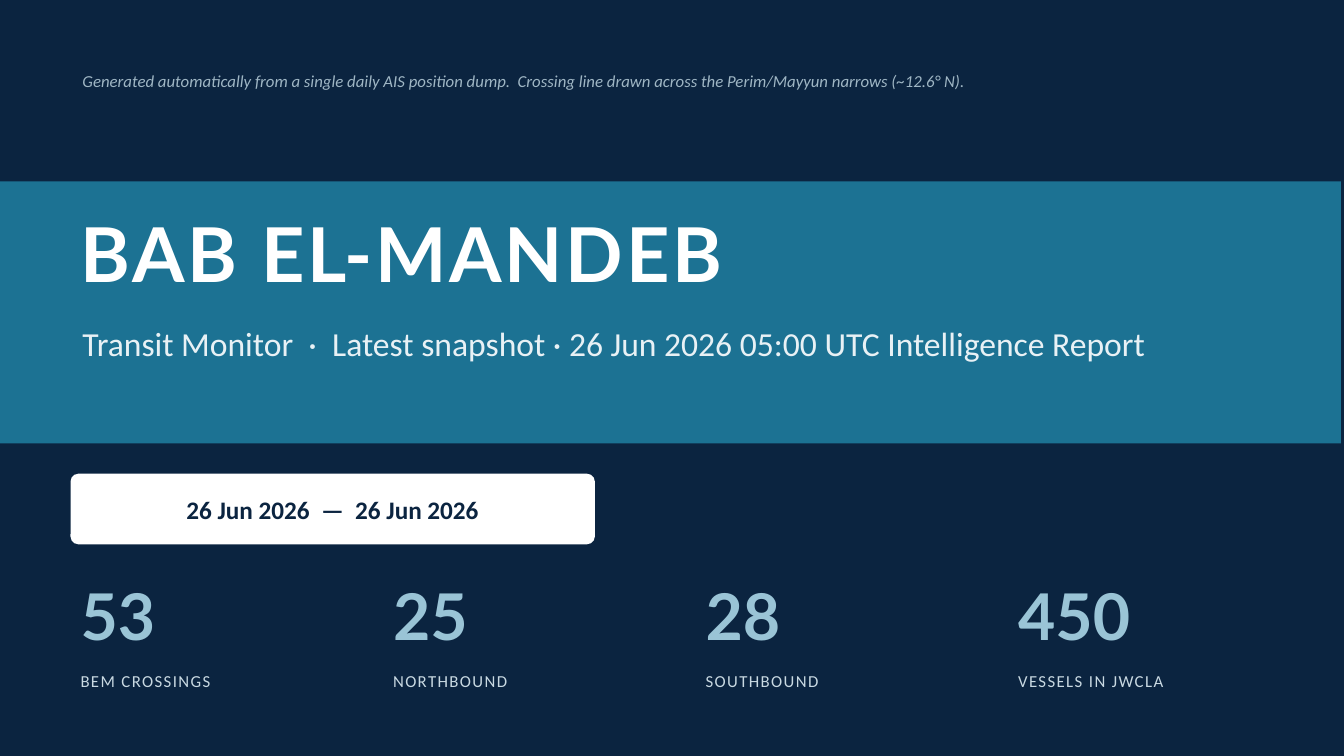
from dataclasses import dataclass

from pptx import Presentation
from pptx.dml.color import RGBColor
from pptx.enum.shapes import MSO_SHAPE
from pptx.enum.text import MSO_ANCHOR, PP_ALIGN
from pptx.util import Inches, Pt

RECTANGLE, ROUNDED = MSO_SHAPE.RECTANGLE, MSO_SHAPE.ROUNDED_RECTANGLE
MIDDLE, LEFT, CENTER = MSO_ANCHOR.MIDDLE, PP_ALIGN.LEFT, PP_ALIGN.CENTER

TITLE = "BAB EL-MANDEB"
SUBTITLE = "Transit Monitor  ·  Latest snapshot · 26 Jun 2026 05:00 UTC Intelligence Report"
PERIOD = "26 Jun 2026  —  26 Jun 2026"
SOURCE_NOTE = (
    "Generated automatically from a single daily AIS position dump.  "
    "Crossing line drawn across the Perim/Mayyun narrows (~12.6° N)."
)
STATISTICS = [
    ("53", "BEM CROSSINGS"),
    ("25", "NORTHBOUND"),
    ("28", "SOUTHBOUND"),
    ("450", "VESSELS IN JWCLA"),
]


@dataclass(frozen=True)
class Theme:
    navy: str = "0B2440"
    teal: str = "1C7293"
    white: str = "FFFFFF"
    ice: str = "E8F1F5"
    sky: str = "9AC4D6"
    mist: str = "C9D9E2"
    slate: str = "9FB6C4"
    display: str = "Lato"
    body: str = "Calibri"
    title_size: int = 54
    number_size: int = 46
    subtitle_size: int = 24
    period_size: int = 18
    small_size: int = 12


THEME = Theme()
SLIDE_WIDTH, SLIDE_HEIGHT = 13.33, 7.5
MARGIN = 0.7
TEXT_LEFT, TEXT_WIDTH = 0.72, 11.9
COLUMN_WIDTH, COLUMN_GAP = 2.85, 0.25
NUMBER_TOP, NUMBER_HEIGHT, LABEL_HEIGHT = 5.65, 0.9, 0.4


def write(shape, text, *, size, color, font=THEME.body, bold=False,
          italic=False, spacing=0, align=LEFT):
    """Fill a shape with one formatted line; spacing is in points per letter."""
    frame = shape.text_frame
    frame.word_wrap = True
    frame.vertical_anchor = MIDDLE
    para = frame.paragraphs[0]
    para.alignment = align
    span = para.add_run()
    span.text = text
    span.font.name = font
    span.font.size = Pt(size)
    span.font.bold = bold
    span.font.italic = italic
    span.font.color.rgb = RGBColor.from_string(color)
    if spacing:
        span.font._element.set("spc", str(spacing * 100))


def add_text(page, area, text, **style):
    write(page.shapes.add_textbox(*map(Inches, area)), text, **style)


def add_panel(page, kind, area, color):
    panel = page.shapes.add_shape(kind, *map(Inches, area))
    panel.shadow.inherit = False
    panel.fill.solid()
    panel.fill.fore_color.rgb = RGBColor.from_string(color)
    panel.line.fill.background()
    return panel


def add_heading(page):
    add_panel(page, RECTANGLE, (0, 1.8, 13.3, 2.6), THEME.teal)
    add_text(page, (MARGIN, 1.95, TEXT_WIDTH, 1.1), TITLE, size=THEME.title_size,
             color=THEME.white, font=THEME.display, bold=True, spacing=2)
    add_text(page, (TEXT_LEFT, 3.05, TEXT_WIDTH, 0.7), SUBTITLE,
             size=THEME.subtitle_size, color=THEME.ice)


def add_period(page):
    pill = add_panel(page, ROUNDED, (MARGIN, 4.7, 5.2, 0.7), THEME.white)
    pill.adjustments[0] = 0.11
    write(pill, PERIOD, size=THEME.period_size, color=THEME.navy, bold=True,
          align=CENTER)


def add_statistics(page):
    for column, (number, label) in enumerate(STATISTICS):
        left = MARGIN + column * (COLUMN_WIDTH + COLUMN_GAP)
        add_text(page, (left, NUMBER_TOP, COLUMN_WIDTH, NUMBER_HEIGHT), number,
                 size=THEME.number_size, color=THEME.sky, font=THEME.display,
                 bold=True)
        add_text(page, (left, NUMBER_TOP + NUMBER_HEIGHT, COLUMN_WIDTH, LABEL_HEIGHT),
                 label, size=THEME.small_size, color=THEME.mist, spacing=1)


def main():
    deck = Presentation()
    deck.slide_width, deck.slide_height = Inches(SLIDE_WIDTH), Inches(SLIDE_HEIGHT)
    page = deck.slides.add_slide(deck.slide_layouts[6])
    page.background.fill.solid()
    page.background.fill.fore_color.rgb = RGBColor.from_string(THEME.navy)
    add_heading(page)
    add_period(page)
    add_statistics(page)
    add_text(page, (TEXT_LEFT, 0.55, TEXT_WIDTH, 0.5), SOURCE_NOTE,
             size=THEME.small_size, color=THEME.slate, italic=True)
    deck.save("out.pptx")


if __name__ == "__main__":
    main()
